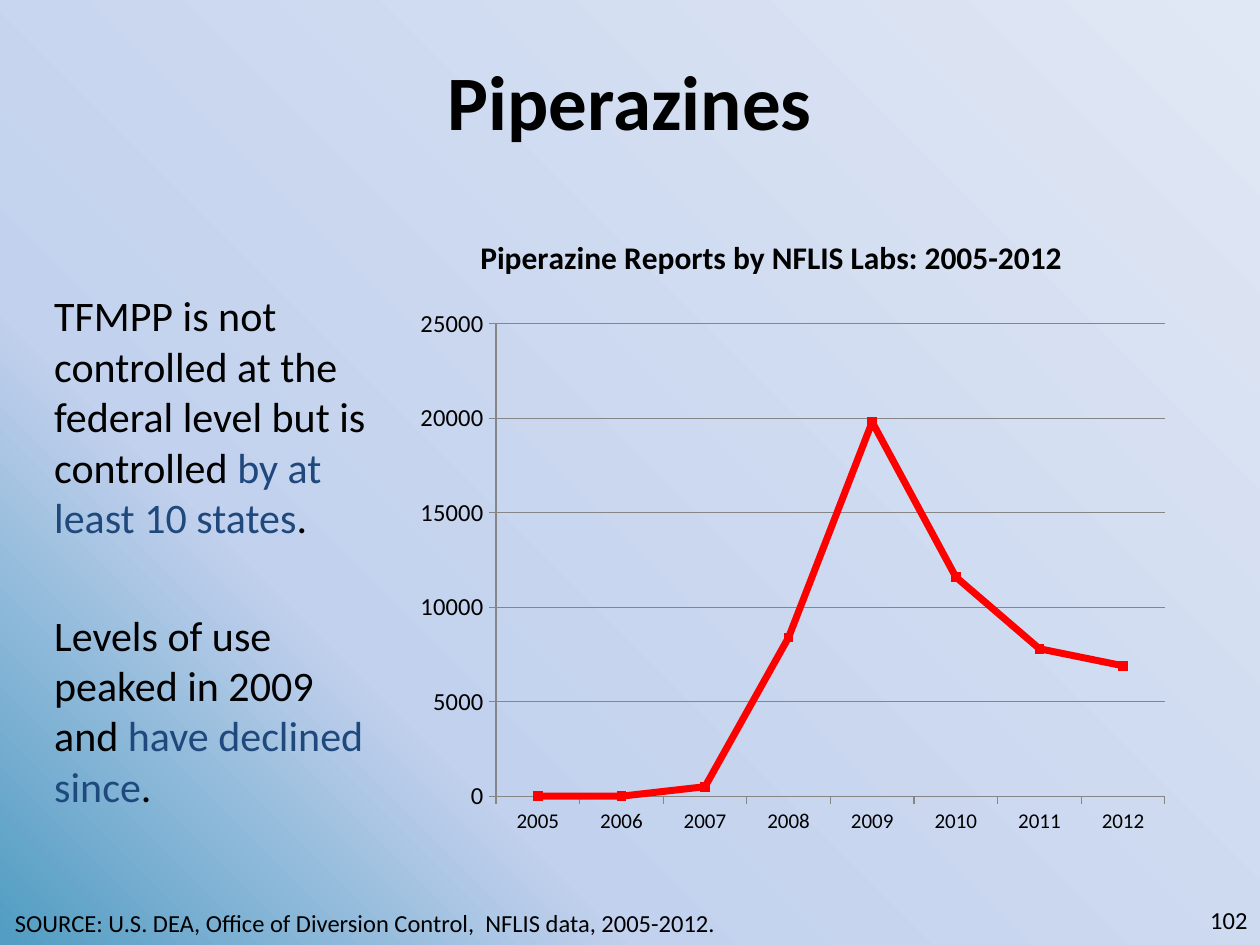
from lxml import etree
from pptx import Presentation
from pptx.chart.data import CategoryChartData
from pptx.dml.color import RGBColor
from pptx.enum.chart import XL_CHART_TYPE as ChartType, XL_MARKER_STYLE as Marker, XL_TICK_MARK as Tick
from pptx.enum.text import MSO_ANCHOR as Anchor, PP_ALIGN as Align
from pptx.oxml import parse_xml
from pptx.oxml.ns import nsdecls, qn
from pptx.util import Inches, Pt

BLACK = RGBColor(0x00, 0x00, 0x00)
NAVY = RGBColor(0x1F, 0x49, 0x7D)
RED = RGBColor(0xFF, 0x00, 0x00)
GRAY = RGBColor(0x86, 0x86, 0x86)
GRADIENT = [(0, RGBColor(0x50, 0x9C, 0xC2)),
            (29, RGBColor(0xC2, 0xD1, 0xED)),
            (100, RGBColor(0xE1, 0xE8, 0xF5))]
FONT = "Calibri"

REPORTS = {"2005": 0, "2006": 0, "2007": 500, "2008": 8400,
           "2009": 19800, "2010": 11600, "2011": 7800, "2012": 6900}
FINDINGS = [
    [("TFMPP is not controlled at the federal level but is controlled ", BLACK),
     ("by at least 10 states", NAVY), (".", BLACK)],
    [("Levels of use peaked in 2009 and ", BLACK),
     ("have declined since", NAVY), (".", BLACK)],
]


def style_font(font, size, bold=False, color=BLACK):
    font.name, font.size, font.bold = FONT, Pt(size), bold
    font.color.rgb = color


def move(shape, area):
    shape.left, shape.top, shape.width, shape.height = map(Inches, area)


class SlideBuilder:
    """Holds the page; every area is (left, top, width, height) in inches."""

    def __init__(self, deck):
        self.page = deck.slides.add_slide(deck.slide_layouts[1])

    def background(self, stops):
        """Radial gradient that spreads from the bottom left corner."""
        fill = self.page.background.fill
        fill.gradient()
        stop_xml = "".join(f'<a:gs pos="{share * 1000}"><a:srgbClr val="{color}"/></a:gs>'
                           for share, color in stops)
        gradient = parse_xml(
            f'<a:gradFill {nsdecls("a")} rotWithShape="1"><a:gsLst>{stop_xml}</a:gsLst>'
            '<a:path path="circle"><a:fillToRect t="100000" r="100000"/></a:path></a:gradFill>')
        old = next(self.page._element.iter(qn("a:gradFill")))
        old.getparent().replace(old, gradient)

    def title(self, text, area):
        box = self.page.shapes.title
        move(box, area)
        box.text_frame.text = text
        box.text_frame.vertical_anchor = Anchor.MIDDLE
        para = box.text_frame.paragraphs[0]
        para.alignment = Align.CENTER
        style_font(para.font, 44, bold=True)

    def body(self, paragraphs, area, gap):
        box = self.page.placeholders[1]
        move(box, area)
        frame = box.text_frame
        for index, spans in enumerate(paragraphs):
            para = frame.add_paragraph() if index else frame.paragraphs[0]
            para.space_before = Pt(gap if index else 4.8)
            style_font(para.font, 24)
            properties = para._p.get_or_add_pPr()
            properties.set("marL", "0")
            properties.set("indent", "0")
            bullet = etree.Element(qn("a:buNone"))
            properties.find(qn("a:defRPr")).addprevious(bullet)
            for text, color in spans:
                span = para.add_run()
                span.text = text
                style_font(span.font, 24, color=color)

    def label(self, text, area, align=Align.LEFT, anchor=Anchor.TOP):
        frame = self.page.shapes.add_textbox(*map(Inches, area)).text_frame
        frame.word_wrap = True
        frame.vertical_anchor = anchor
        frame.text = text
        para = frame.paragraphs[0]
        para.alignment = align
        style_font(para.font, 14)

    def line_chart(self, title, values, area, plot):
        """Line chart whose inner plot area is given as shares of the chart."""
        data = CategoryChartData()
        data.categories = list(values)
        data.add_series("Series 1", list(values.values()))
        chart = self.page.shapes.add_chart(
            ChartType.LINE_MARKERS, *map(Inches, area), data).chart
        style_font(chart.font, 18)
        chart.has_legend = False
        chart.has_title = True
        chart.chart_title.include_in_layout = False
        chart.chart_title.text_frame.text = title
        style_font(chart.chart_title.text_frame.paragraphs[0].font, 18, bold=True)

        for axis, size in ((chart.category_axis, 12), (chart.value_axis, 14)):
            style_font(axis.tick_labels.font, size)
            axis.major_tick_mark, axis.minor_tick_mark = Tick.OUTSIDE, Tick.NONE
            axis.format.line.color.rgb = GRAY
        scale = chart.value_axis
        scale.minimum_scale, scale.maximum_scale, scale.major_unit = 0, 25000, 5000
        scale.has_major_gridlines = True
        scale.major_gridlines.format.line.color.rgb = GRAY

        chart.plots[0].vary_by_categories = False
        series = chart.plots[0].series[0]
        series.smooth = False
        series.format.line.color.rgb = RED
        series.format.line.width = Pt(4)
        series.marker.style, series.marker.size = Marker.AUTOMATIC, 5
        series.marker.format.fill.solid()
        series.marker.format.fill.fore_color.rgb = RED
        series.marker.format.line.color.rgb = RED

        plot_area = chart._chartSpace.chart.plotArea
        for old in plot_area.findall(qn("c:layout")):
            plot_area.remove(old)
        sides = "".join(f'<c:{side} val="{share}"/>' for side, share in zip("xywh", plot))
        plot_area.insert(0, parse_xml(
            f'<c:layout {nsdecls("c")}><c:manualLayout><c:layoutTarget val="inner"/>'
            f'<c:xMode val="edge"/><c:yMode val="edge"/>{sides}</c:manualLayout></c:layout>'))


def main():
    deck = Presentation()
    deck.slide_width, deck.slide_height = Inches(10), Inches(7.5)
    slide = SlideBuilder(deck)
    slide.background(GRADIENT)
    slide.title("Piperazines", (0.75, 0.17, 8.5, 1.25))
    slide.body(FINDINGS, (0.33, 2.25, 2.75, 3.92), gap=38.5)
    slide.line_chart("Piperazine Reports by NFLIS Labs: 2005-2012", REPORTS,
                     (3, 1.67, 6.25, 5), plot=(0.15, 0.18, 0.85, 0.75))
    slide.label("SOURCE: U.S. DEA, Office of Diversion Control,  NFLIS data, 2005-2012.",
                (0.02, 7.16, 6.65, 0.34))
    slide.label("102", (7.67, 7.1, 2.33, 0.4), Align.RIGHT, Anchor.MIDDLE)
    deck.save("out.pptx")


if __name__ == "__main__":
    main()
